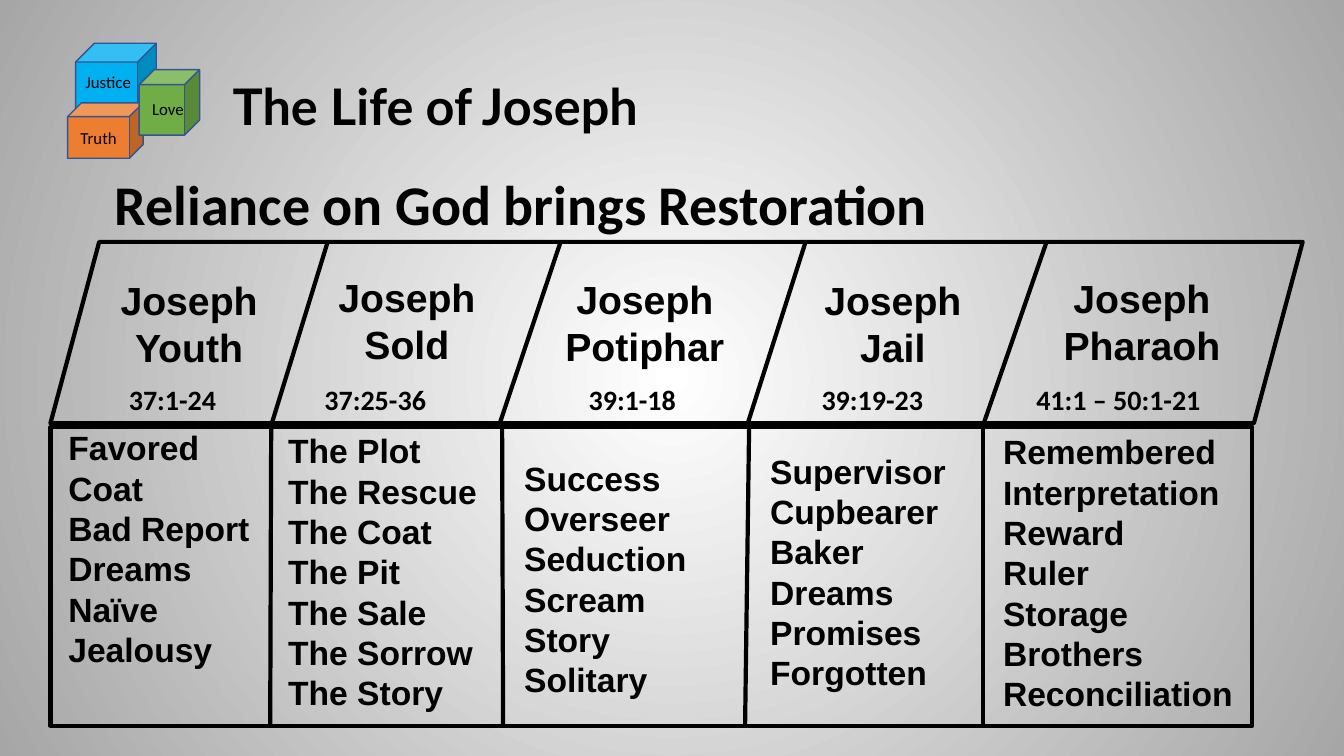
"""Build the slide on the life of Joseph."""
from dataclasses import dataclass

from lxml import etree
from pptx import Presentation
from pptx import util as u
from pptx.dml.color import RGBColor
from pptx.enum import shapes, text
from pptx.oxml.ns import qn

Box = tuple[float, float, float, float]


@dataclass(frozen=True)
class Theme:
    """Colours, fonts and sizes of the slide."""
    ink: str = "000000"
    centre: str = "FFFFFF"
    edge: str = "A6A6A6"
    cube_line: str = "325491"
    blue: str = "00B0F0"
    orange: str = "ED7D31"
    green: str = "70AD47"
    title_font: str = "Lato"
    body_font: str = "Calibri"
    grid_font: str = "Arial"
    title: int = 36
    subtitle: int = 40
    heading: int = 28
    event: int = 24
    verse: int = 20
    label: int = 12
    rule: int = 3


@dataclass(frozen=True)
class Cube:
    """A labelled building block."""
    label: str
    color: str
    box: Box
    label_box: Box


@dataclass(frozen=True)
class Stage:
    """A stage of the story, one column of the chart."""
    heading: list[str]
    heading_at: tuple[float, float]
    verses: str
    verses_x: float
    events: list[str]
    events_box: Box


@dataclass(frozen=True)
class Divider:
    """A slanted rule above an upright rule."""
    top_x: float
    slant_x: float
    post_x: float
    foot_x: float


T = Theme()
GRID_TOP, GRID_MID, GRID_FOOT = 2.4, 4.22, 7.2
VERSES_BOX: Box = (0.75, 3.75, 11.67, 0.44)
INSET = 0.1

CUBES = [
    Cube("Justice", T.blue, (0.75, 0.43, 0.8, 0.74), (0.75, 0.66, 0.82, 0.33)),
    Cube("Truth", T.orange, (0.67, 1.02, 0.75, 0.55), (0.7, 1.22, 0.74, 0.34)),
    Cube("Love", T.green, (1.38, 0.69, 0.6, 0.65), (1.41, 0.93, 0.67, 0.33)),
]
STAGES = [
    Stage(["Joseph Youth"], (0.93, 2.69), "37:1-24", 1.28,
          ["Favored", "Coat", "Bad Report", "Dreams", "Naïve", "Jealousy"],
          (0.58, 4.19, 2.16, 2.76)),
    Stage(["Joseph", "Sold"], (3.09, 2.66), "37:25-36", 3.22,
          ["The Plot", "The Rescue", "The Coat", "The Pit", "The Sale",
           "The Sorrow", "The Story"], (2.76, 4.22, 2.16, 2.93)),
    Stage(["Joseph", "Potiphar"], (5.45, 2.68), "39:1-18", 5.84,
          ["Success", "Overseer", "Seduction", "Scream", "Story", "Solitary"],
          (5.1, 4.49, 2.22, 2.52)),
    Stage(["Joseph", "Jail"], (7.91, 2.69), "39:19-23", 8.15,
          ["Supervisor", "Cupbearer", "Baker", "Dreams", "Promises",
           "Forgotten"], (7.54, 4.42, 2.21, 2.52)),
    Stage(["Joseph", "Pharaoh"], (10.38, 2.67), "41:1 – 50:1-21", 10.28,
          ["Remembered", "Interpretation", "Reward", "Ruler", "Storage",
           "Brothers", "Reconciliation"], (9.85, 4.23, 2.5, 2.93)),
]
DIVIDERS = [
    Divider(3.25, 2.69, 2.69, 2.68),
    Divider(5.56, 4.95, 4.98, 4.99),
    Divider(7.99, 7.41, 7.43, 7.39),
    Divider(10.38, 9.75, 9.75, 9.75),
]


def add_text(parent, lines: list[str], box: Box, *, size: int, font: str,
             bold: bool = True, align=text.PP_ALIGN.LEFT,
             anchor=text.MSO_ANCHOR.TOP, spacing: float = 1.0):
    """Add a text box with one paragraph per line."""
    sp = parent.add_textbox(*map(u.Inches, box))
    tf = sp.text_frame
    tf.word_wrap = True
    tf.vertical_anchor = anchor
    for i, line in enumerate(lines):
        p = tf.add_paragraph() if i else tf.paragraphs[0]
        p.alignment, p.line_spacing = align, spacing
        r = p.add_run()
        r.text = line
        r.font.size, r.font.name, r.font.bold = u.Pt(size), font, bold
        r.font.color.rgb = RGBColor.from_string(T.ink)
    return sp


def add_outline(parent, kind, box: Box, *, line: str = T.ink,
                width: float = T.rule, fill: str | None = None):
    """Add a preset shape, unfilled unless a colour is given."""
    sp = parent.add_shape(kind, *map(u.Inches, box))
    sp.shadow.inherit = False
    sp.line.color.rgb = RGBColor.from_string(line)
    sp.line.width = u.Pt(width)
    if fill:
        sp.fill.solid()
        sp.fill.fore_color.rgb = RGBColor.from_string(fill)
    else:
        sp.fill.background()
    return sp


def add_rule(parent, x1: float, y1: float, x2: float, y2: float) -> None:
    """Add a straight rule of the chart."""
    cxn = parent.add_connector(shapes.MSO_CONNECTOR.STRAIGHT,
                               *map(u.Inches, (x1, y1, x2, y2)))
    cxn.line.color.rgb = RGBColor.from_string(T.ink)
    cxn.line.width = u.Pt(T.rule)
    etree.SubElement(cxn._element.spPr, qn("a:effectLst"))


def paint_background(s) -> None:
    """Fill the background with a radial gradient."""
    fill = s.background.fill
    fill.gradient()
    for stop, color in zip(fill.gradient_stops, (T.centre, T.edge)):
        stop.color.rgb = RGBColor.from_string(color)
    lin = next(s._element.iter(qn("a:lin")))
    radial = etree.Element(qn("a:path"))
    radial.set("path", "circle")
    focus = etree.SubElement(radial, qn("a:fillToRect"))
    for side in "ltrb":
        focus.set(side, "50000")
    lin.getparent().replace(lin, radial)


def add_cubes(parent) -> None:
    """Add the grouped cubes, then their labels."""
    group = parent.add_group_shape().shapes
    for cube in CUBES:
        add_outline(group, shapes.MSO_SHAPE.CUBE, cube.box,
                    line=T.cube_line, width=1, fill=cube.color)
    for cube in CUBES:
        add_text(group, [cube.label], cube.label_box, size=T.label,
                 font=T.body_font, bold=False)


def add_verses(parent) -> None:
    """Add the row of verses, each at its own tab stop."""
    row = "".join("\t" + stage.verses for stage in STAGES)
    sp = add_text(parent, [row], VERSES_BOX, size=T.verse, font=T.body_font)
    pPr = sp.text_frame.paragraphs[0]._p.get_or_add_pPr()
    tabs = etree.SubElement(pPr, qn("a:tabLst"))
    for stage in STAGES:
        offset = u.Inches(stage.verses_x - VERSES_BOX[0] - INSET)
        etree.SubElement(tabs, qn("a:tab"), pos=str(int(offset)), algn="l")


def add_chart_grid(parent) -> None:
    """Add the frame and the dividers of the chart."""
    add_outline(parent, shapes.MSO_SHAPE.RECTANGLE, (0.5, 4.24, 11.92, 2.96))
    sp = add_outline(parent, shapes.MSO_SHAPE.PARALLELOGRAM,
                     (0.5, GRID_TOP, 12.42, 1.8))
    sp.adjustments[0] = 0.269
    for d in DIVIDERS:
        add_rule(parent, d.top_x, GRID_TOP, d.slant_x, GRID_MID)
        add_rule(parent, d.post_x, GRID_MID, d.foot_x, GRID_FOOT)


def main() -> None:
    """Build and save the presentation."""
    prs = Presentation()
    prs.slide_width, prs.slide_height = u.Inches(13.33), u.Inches(7.5)
    s = prs.slides.add_slide(prs.slide_layouts[6])
    paint_background(s)
    add_text(s.shapes, ["The Life of Joseph"], (2.21, 0.59, 7.01, 0.98),
             size=T.title, font=T.title_font, spacing=0.9,
             anchor=text.MSO_ANCHOR.MIDDLE)
    add_cubes(s.shapes)
    add_chart_grid(s.shapes)
    for stage in STAGES:
        add_text(s.shapes, stage.heading, (*stage.heading_at, 1.89, 1.04),
                 size=T.heading, font=T.grid_font, align=text.PP_ALIGN.CENTER)
        add_text(s.shapes, stage.events, stage.events_box,
                 size=T.event, font=T.grid_font)
    add_text(s.shapes, ["Reliance on God brings Restoration"],
             (1.04, 1.63, 8.66, 0.77), size=T.subtitle, font=T.body_font)
    add_verses(s.shapes)
    prs.save("out.pptx")


if __name__ == "__main__":
    main()
